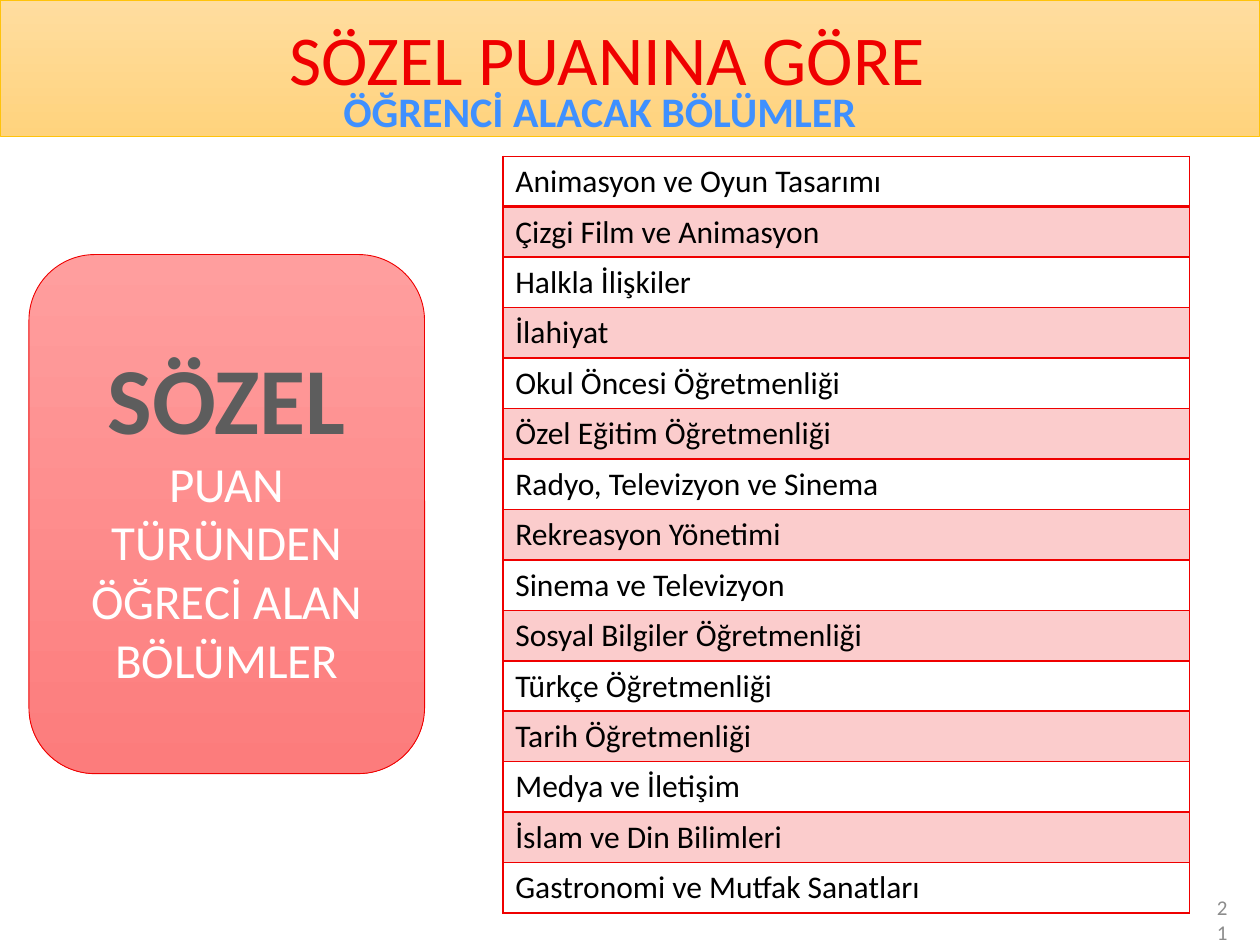
from dataclasses import dataclass

from lxml import etree
from pptx import Presentation
from pptx import util as u
from pptx.dml.color import RGBColor
from pptx.enum import shapes, text
from pptx.oxml import ns

Inches, Pt = u.Inches, u.Pt

FONT = "Calibri"
RED = RGBColor(0xEF, 0x00, 0x00)
BLACK = RGBColor(0x00, 0x00, 0x00)
WHITE = RGBColor(0xFF, 0xFF, 0xFF)
BLUE = RGBColor(0x3F, 0x90, 0xFF)
DARK_GRAY = RGBColor(0x5D, 0x5D, 0x5D)
LIGHT_GRAY = RGBColor(0x8C, 0x8C, 0x8C)
GOLD = RGBColor(0xFF, 0xC3, 0x0B)
GOLD_TOP = RGBColor(0xFF, 0xDD, 0x9F)
GOLD_BOTTOM = RGBColor(0xFF, 0xD3, 0x7D)
PINK_TOP = RGBColor(0xFF, 0x9E, 0x9E)
PINK_BOTTOM = RGBColor(0xFC, 0x7C, 0x7C)

DEPARTMENTS = [
    "Animasyon ve Oyun Tasarımı",
    "Çizgi Film ve Animasyon",
    "Halkla İlişkiler",
    "İlahiyat",
    "Okul Öncesi Öğretmenliği",
    "Özel Eğitim Öğretmenliği",
    "Radyo, Televizyon ve Sinema",
    "Rekreasyon Yönetimi",
    "Sinema ve Televizyon",
    "Sosyal Bilgiler Öğretmenliği",
    "Türkçe Öğretmenliği",
    "Tarih Öğretmenliği",
    "Medya ve İletişim",
    "İslam ve Din Bilimleri",
    "Gastronomi ve Mutfak Sanatları",
]


@dataclass
class Box:
    left: float
    top: float
    width: float
    height: float

    def lengths(self) -> list:
        return [Inches(v) for v in (self.left, self.top, self.width, self.height)]


@dataclass
class Line:
    words: str
    size: float
    color: RGBColor
    bold: bool = False
    align: text.PP_ALIGN = text.PP_ALIGN.CENTER


@dataclass
class Panel:
    kind: shapes.MSO_SHAPE
    box: Box
    top_color: RGBColor
    bottom_color: RGBColor
    line_color: RGBColor


@dataclass
class Label:
    box: Box
    line: Line
    anchor: text.MSO_ANCHOR = text.MSO_ANCHOR.TOP


def write_lines(text_frame, lines: list[Line]) -> None:
    text_frame.word_wrap = True
    text_frame.text = "\n".join(line.words for line in lines)
    for paragraph, line in zip(text_frame.paragraphs, lines):
        paragraph.alignment = line.align
        for run in paragraph.runs:
            run.font.name = FONT
            run.font.size = Pt(line.size)
            run.font.bold = line.bold
            run.font.color.rgb = line.color


def draw_panel(slide, panel: Panel):
    shape = slide.shapes.add_shape(panel.kind, *panel.box.lengths())
    shape.shadow.inherit = False
    shape.fill.gradient()
    shape.fill.gradient_angle = 270
    for stop, color in zip(shape.fill.gradient_stops, (panel.top_color, panel.bottom_color)):
        stop.color.rgb = color
    shape.line.color.rgb = panel.line_color
    shape.line.width = Pt(0.5)
    return shape


def draw_label(slide, label: Label) -> None:
    shape = slide.shapes.add_textbox(*label.box.lengths())
    write_lines(shape.text_frame, [label.line])
    shape.text_frame.vertical_anchor = label.anchor


def set_borders(cell, color: RGBColor, widths: dict[str, float]) -> None:
    properties = cell._tc.get_or_add_tcPr()
    for index, (side, width) in enumerate(widths.items()):
        border = etree.Element(ns.qn(f"a:{side}"), w=str(Pt(width)))
        fill = etree.SubElement(border, ns.qn("a:solidFill"))
        etree.SubElement(fill, ns.qn("a:srgbClr"), val=str(color))
        properties.insert(index, border)


def tint_cell(cell, color: RGBColor, percent: int) -> None:
    cell.fill.solid()
    cell.fill.fore_color.rgb = color
    color_element = cell._tc.tcPr.find(f"{ns.qn('a:solidFill')}/{ns.qn('a:srgbClr')}")
    etree.SubElement(color_element, ns.qn("a:alpha"), val=str(percent * 1000))


def draw_department_table(slide, box: Box, names: list[str]) -> None:
    table = slide.shapes.add_table(len(names), 1, *box.lengths()).table
    table.first_row = False
    table.horz_banding = False
    for index, name in enumerate(names):
        table.rows[index].height = Inches(box.height / len(names))
        cell = table.cell(index, 0)
        line = Line(name, 18, BLACK, align=text.PP_ALIGN.LEFT)
        write_lines(cell.text_frame, [line])
        if index % 2:
            tint_cell(cell, RED, 20)
        else:
            cell.fill.background()
        # The rule under the first row is heavier
        top = 2 if index == 1 else 1
        bottom = 2 if index == 0 else 1
        set_borders(cell, RED, {"lnL": 1, "lnR": 1, "lnT": top, "lnB": bottom})


def main() -> None:
    presentation = Presentation()
    presentation.slide_width = Inches(10)
    presentation.slide_height = Inches(7.5)
    slide = presentation.slides.add_slide(presentation.slide_layouts[6])

    # Score type card
    card = draw_panel(slide, Panel(shapes.MSO_SHAPE.ROUNDED_RECTANGLE,
                                   Box(0.23, 2.02, 3.14, 4.12), PINK_TOP, PINK_BOTTOM, RED))
    write_lines(card.text_frame, [
        Line("SÖZEL", 54, DARK_GRAY, bold=True),
        Line("PUAN TÜRÜNDEN ÖĞRECİ ALAN BÖLÜMLER", 28, WHITE),
    ])
    card.text_frame.vertical_anchor = text.MSO_ANCHOR.MIDDLE

    # Header band
    draw_panel(slide, Panel(shapes.MSO_SHAPE.RECTANGLE,
                            Box(0, 0, 10, 1.08), GOLD_TOP, GOLD_BOTTOM, GOLD))

    # Title, subtitle and slide number
    labels = [
        Label(Box(-0.18, 0.07, 10, 1.18), Line("SÖZEL PUANINA GÖRE", 40, RED)),
        Label(Box(0.27, 0.63, 8.98, 0.5), Line("ÖĞRENCİ ALACAK BÖLÜMLER", 24, BLUE, bold=True)),
        Label(Box(9.49, 7.1, 0.35, 0.4),
              Line("21", 12, LIGHT_GRAY, align=text.PP_ALIGN.RIGHT), text.MSO_ANCHOR.MIDDLE),
    ]
    for label in labels:
        draw_label(slide, label)

    # Departments
    draw_department_table(slide, Box(3.99, 1.24, 5.45, 6), DEPARTMENTS)

    presentation.save("out.pptx")


if __name__ == "__main__":
    main()
